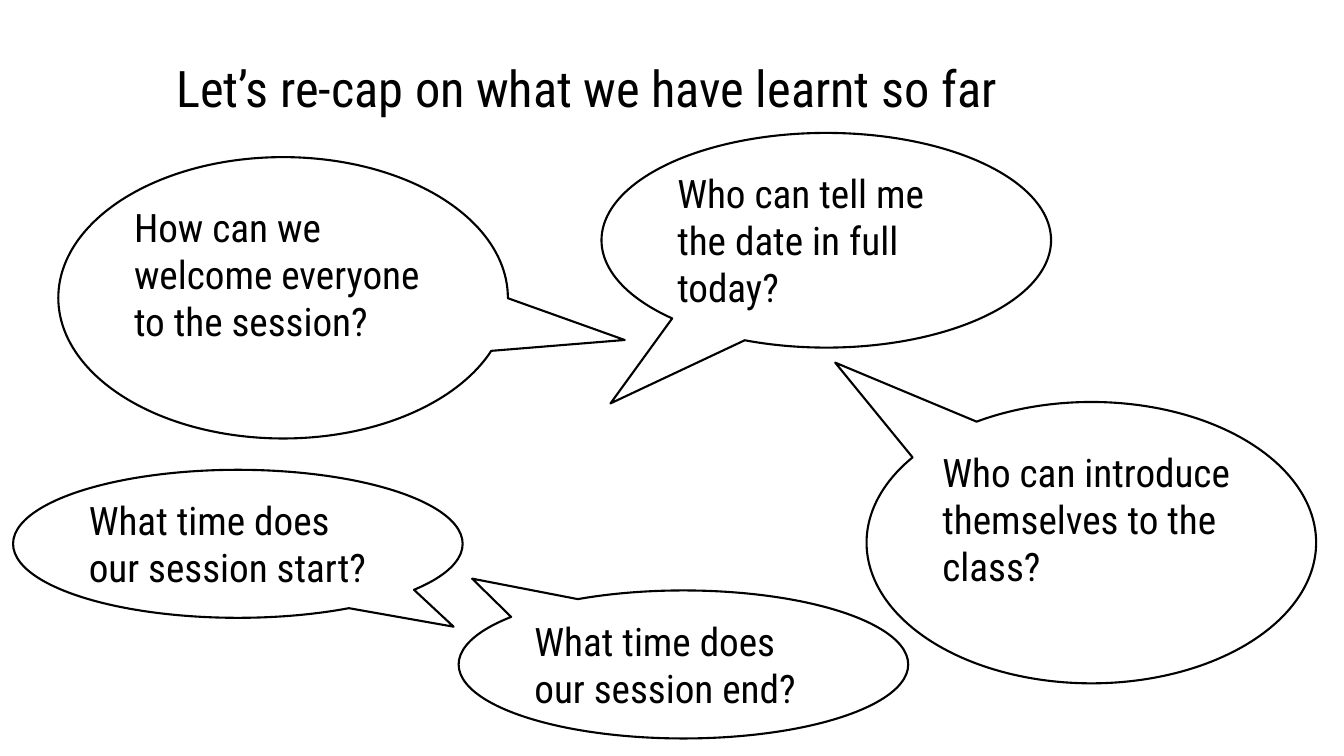
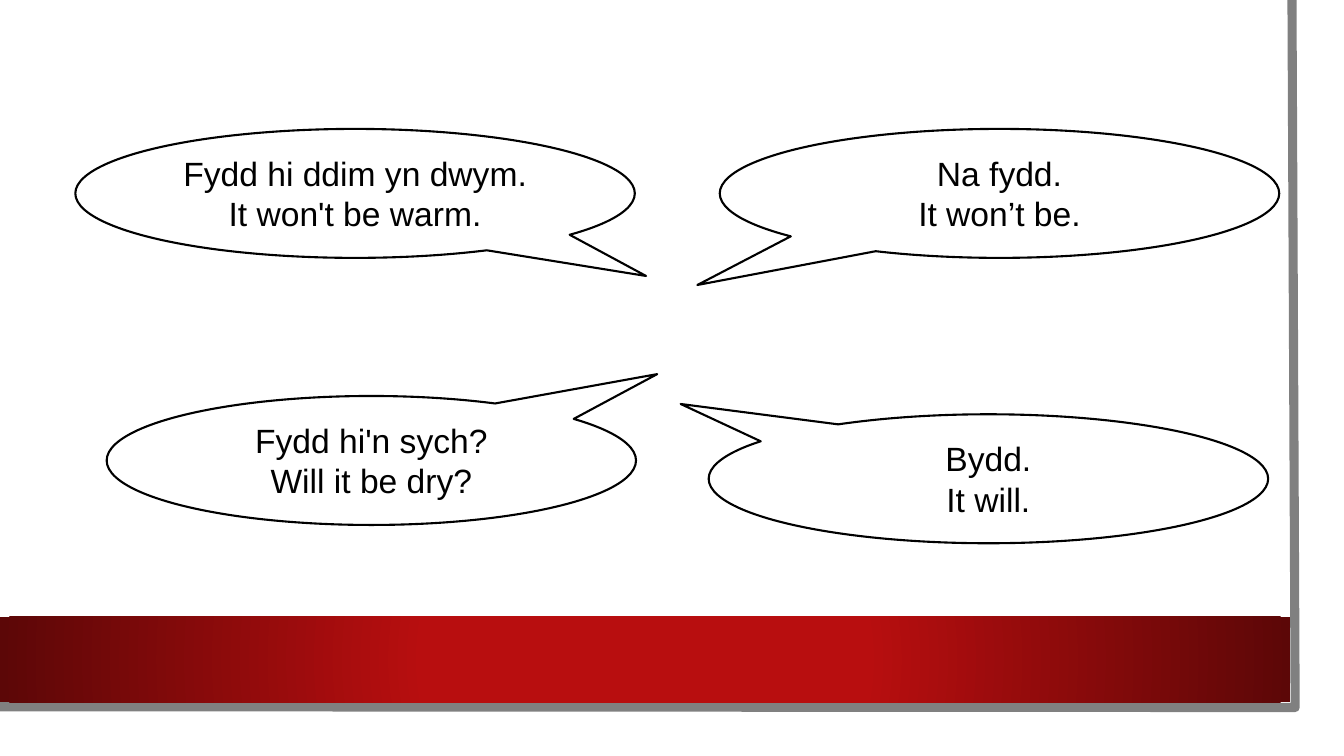
from dataclasses import dataclass

from lxml import etree
from pptx import Presentation
from pptx import util as u
from pptx.dml.color import RGBColor
from pptx.enum import shapes, text
from pptx.oxml import ns
from pptx.slide import Slide
from pptx.text.text import TextFrame

BLACK = RGBColor(0x00, 0x00, 0x00)
WHITE = RGBColor(0xFF, 0xFF, 0xFF)
GREY = RGBColor(0x80, 0x80, 0x80)
RED = RGBColor(0xB8, 0x0E, 0x0F)
DARK_RED = RGBColor(0x5C, 0x07, 0x07)

CONDENSED = "Roboto Condensed"
SANS = "Arial"
LEFT = text.PP_ALIGN.LEFT
CENTER = text.PP_ALIGN.CENTER


@dataclass(frozen=True)
class Bubble:
    """A speech bubble in centimetres; the tip is relative to its centre and size."""

    left: float
    top: float
    width: float
    height: float
    tip: tuple[float, float]
    lines: tuple[str, ...]


QUESTION_WIDTH = 11.33
QUESTIONS = (
    Bubble(15.16, 3.35, QUESTION_WIDTH, 5.41, (-0.48, 0.76),
           ("Who can tell me the date in full today?",)),
    Bubble(21.84, 10.13, QUESTION_WIDTH, 7.09, (-0.57, -0.64),
           ("Who can introduce themselves to the class?",)),
    Bubble(1.47, 3.96, QUESTION_WIDTH, 7.09, (0.76, 0.15),
           ("How can we welcome everyone to the session?",)),
    Bubble(0.33, 11.84, QUESTION_WIDTH, 3.73, (0.48, 0.56),
           ("What time does our session start?",)),
    Bubble(11.56, 14.88, QUESTION_WIDTH, 3.73, (-0.47, -0.58),
           ("What time does our session end?",)),
)

PHRASE_HEIGHT = 3.25
PHRASES = (
    Bubble(1.9, 3.25, 14.1, PHRASE_HEIGHT, (0.52, 0.64),
           ("Fydd hi ddim yn dwym.", "It won't be warm.")),
    Bubble(2.69, 9.98, 13.34, PHRASE_HEIGHT, (0.54, -0.67),
           ("Fydd hi'n sych?", "Will it be dry?")),
    Bubble(17.86, 10.44, 14.1, PHRASE_HEIGHT, (-0.55, -0.58),
           ("Bydd.", "It will.")),
    Bubble(18.14, 3.25, 14.1, PHRASE_HEIGHT, (-0.54, 0.71),
           ("Na fydd.", "It won’t be.")),
)


def write(frame: TextFrame, lines: tuple[str, ...], *, font: str, size: float,
          align: text.PP_ALIGN = LEFT) -> None:
    frame.word_wrap = True
    frame.auto_size = text.MSO_AUTO_SIZE.SHAPE_TO_FIT_TEXT
    frame.vertical_anchor = text.MSO_ANCHOR.TOP
    for index, line in enumerate(lines):
        para = frame.add_paragraph() if index else frame.paragraphs[0]
        para.alignment = align
        span = para.add_run()
        span.text = line
        span.font.name = font
        span.font.size = u.Pt(size)
        span.font.color.rgb = BLACK


def add_title(page: Slide, wording: str) -> None:
    title = page.shapes.title
    title.left, title.top = u.Cm(4.19), u.Cm(1.3)
    title.width, title.height = u.Cm(26.97), u.Cm(1.8)
    write(title.text_frame, (wording,), font=CONDENSED, size=36)


def add_bubble(page: Slide, bubble: Bubble, *, font: str, size: float,
               align: text.PP_ALIGN = LEFT) -> None:
    callout = page.shapes.add_shape(
        shapes.MSO_SHAPE.OVAL_CALLOUT, u.Cm(bubble.left), u.Cm(bubble.top),
        u.Cm(bubble.width), u.Cm(bubble.height))
    callout.adjustments[0], callout.adjustments[1] = bubble.tip
    callout.shadow.inherit = False
    callout.fill.solid()
    callout.fill.fore_color.rgb = WHITE
    callout.line.color.rgb = BLACK
    callout.line.width = u.Pt(1.5)
    write(callout.text_frame, bubble.lines, font=font, size=size, align=align)


def add_page_edge(page: Slide) -> None:
    """Draw the grey line along the right and bottom of the page."""
    corners = [(u.Cm(x), u.Cm(y)) for x, y in ((32.56, 0), (32.64, 17.83), (-0.08, 17.81))]
    builder = page.shapes.build_freeform(*corners[0])
    builder.add_line_segments(corners[1:], close=False)
    edge = builder.convert_to_shape()
    edge.shadow.inherit = False
    edge.fill.background()
    edge.line.color.rgb = GREY
    edge.line.width = u.Pt(6.5)


def add_band(page: Slide) -> None:
    """Draw the red band, shaded from its centre outwards."""
    band = page.shapes.add_shape(
        shapes.MSO_SHAPE.RECTANGLE, 0, u.Cm(15.54), u.Cm(32.51), u.Cm(2.16))
    band.shadow.inherit = False
    band.line.fill.background()
    band.fill.gradient()
    for stop, (position, color) in zip(band.fill.gradient_stops,
                                       ((0.34, RED), (1, DARK_RED))):
        stop.position = position
        stop.color.rgb = color
    gradient = band.element.spPr.find(ns.qn("a:gradFill"))
    linear = gradient.find(ns.qn("a:lin"))
    radial = etree.Element(ns.qn("a:path"), {"path": "circle"})
    etree.SubElement(radial, ns.qn("a:fillToRect"),
                     {side: "50000" for side in "ltrb"})
    gradient.replace(linear, radial)


def main() -> None:
    deck = Presentation()
    deck.slide_width, deck.slide_height = u.Cm(33.87), u.Cm(19.05)
    title_only, blank = deck.slide_layouts[5], deck.slide_layouts[6]

    recap = deck.slides.add_slide(title_only)
    add_title(recap, "Let’s re-cap on what we have learnt so far")
    for question in QUESTIONS:
        add_bubble(recap, question, font=CONDENSED, size=28)

    weather = deck.slides.add_slide(blank)
    add_page_edge(weather)
    add_band(weather)
    for phrase in PHRASES:
        add_bubble(weather, phrase, font=SANS, size=24, align=CENTER)

    deck.save("out.pptx")


if __name__ == "__main__":
    main()
